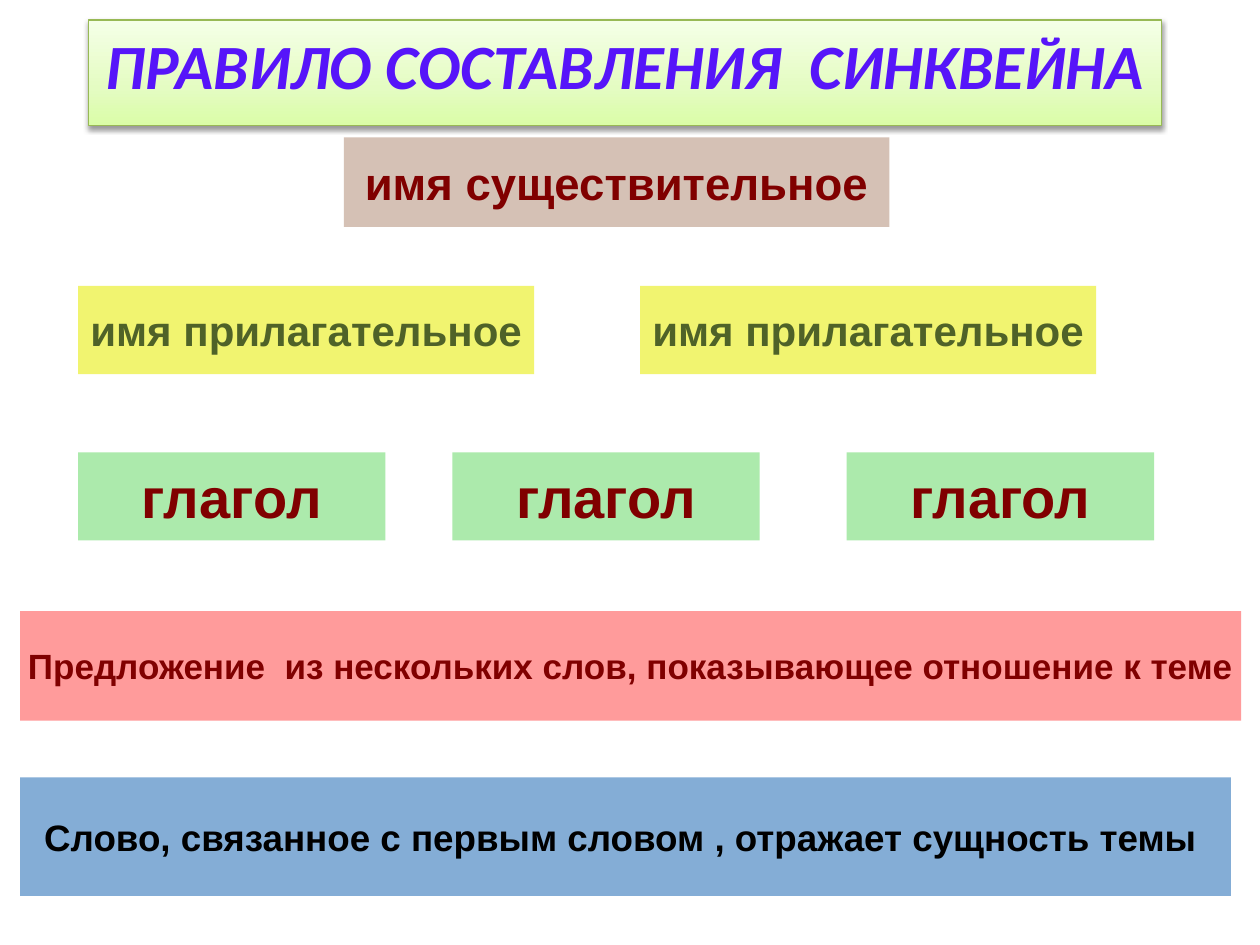
import pptx
import pptx.util
import pptx.dml.color
import pptx.enum.shapes
import pptx.enum.text
import pptx.oxml
import pptx.oxml.ns

Inches = pptx.util.Inches

HEADING = "ПРАВИЛО СОСТАВЛЕНИЯ  СИНКВЕЙНА"
HEADING_GRADIENT = [(0, "DAFDA7"), (35, "E4FCC2"), (100, "F5FFE7")]

ROWS = [
    {"text": "имя существительное", "lefts": [2.73], "top": 1.09, "width": 4.33,
     "height": 0.71, "fill": "D5C1B5", "color": "800000", "size": 26},
    {"text": "имя прилагательное", "lefts": [0.62, 5.08], "top": 2.27, "width": 3.62,
     "height": 0.7, "fill": "F1F470", "color": "4F6228", "size": 24},
    {"text": "глагол", "lefts": [0.62, 3.59, 6.72], "top": 3.59, "width": 2.44,
     "height": 0.7, "fill": "ACEAAC", "color": "800000", "size": 32},
    {"text": "Предложение  из нескольких слов, показывающее отношение к теме",
     "lefts": [0.16], "top": 4.85, "width": 9.69,
     "height": 0.87, "fill": "FF9B9B", "color": "800000", "size": 20},
    {"text": "Слово, связанное с первым словом , отражает сущность темы ",
     "lefts": [0.16], "top": 6.17, "width": 9.61,
     "height": 0.94, "fill": "84ADD6", "color": "000000", "size": 21},
]


def rgb(code):
    return pptx.dml.color.RGBColor.from_string(code)


def write(frame, text, font_name, size, color, italic=None):
    paragraph = frame.paragraphs[0]
    paragraph.alignment = pptx.enum.text.PP_ALIGN.CENTER
    run = paragraph.add_run()
    run.text = text
    run.font.name = font_name
    run.font.size = pptx.util.Pt(size)
    run.font.bold = True
    run.font.italic = italic
    run.font.color.rgb = rgb(color)


def append_properties(shape, xml):
    shape.element.spPr.append(pptx.oxml.parse_xml(xml))


def add_heading(slide):
    heading = slide.shapes.title
    heading.left, heading.top = Inches(0.7), Inches(0.16)
    heading.width, heading.height = Inches(8.52), Inches(0.71)
    namespace = pptx.oxml.ns.nsdecls("a")
    stops = "".join(
        f'<a:gs pos="{position * 1000}"><a:srgbClr val="{color}"/></a:gs>'
        for position, color in HEADING_GRADIENT
    )
    append_properties(
        heading,
        f'<a:gradFill {namespace} rotWithShape="1"><a:gsLst>{stops}</a:gsLst>'
        '<a:lin ang="16200000" scaled="0"/></a:gradFill>',
    )
    heading.line.color.rgb = rgb("98B955")
    heading.line.width = pptx.util.Pt(0.75)
    append_properties(
        heading,
        f'<a:effectLst {namespace}><a:outerShdw blurRad="40000" dist="20000" '
        'dir="5400000" rotWithShape="0"><a:srgbClr val="000000">'
        '<a:alpha val="38000"/></a:srgbClr></a:outerShdw></a:effectLst>',
    )
    frame = heading.text_frame
    frame.word_wrap = True
    frame.auto_size = pptx.enum.text.MSO_AUTO_SIZE.SHAPE_TO_FIT_TEXT
    frame.vertical_anchor = pptx.enum.text.MSO_ANCHOR.TOP
    write(frame, HEADING, "Calibri", 36, "5615F9", italic=True)


def add_row(slide, row):
    for left in row["lefts"]:
        block = slide.shapes.add_shape(
            pptx.enum.shapes.MSO_SHAPE.RECTANGLE,
            Inches(left), Inches(row["top"]), Inches(row["width"]), Inches(row["height"]),
        )
        block.shadow.inherit = False
        block.fill.solid()
        block.fill.fore_color.rgb = rgb(row["fill"])
        block.line.fill.background()
        frame = block.text_frame
        frame.word_wrap = False
        frame.vertical_anchor = pptx.enum.text.MSO_ANCHOR.MIDDLE
        write(frame, row["text"], "Arial", row["size"], row["color"])


def main():
    deck = pptx.Presentation()
    deck.slide_width, deck.slide_height = Inches(10), Inches(7.5)
    slide = deck.slides.add_slide(deck.slide_layouts.get_by_name("Title Only"))
    add_heading(slide)
    for row in ROWS:
        add_row(slide, row)
    deck.save("out.pptx")


if __name__ == "__main__":
    main()
